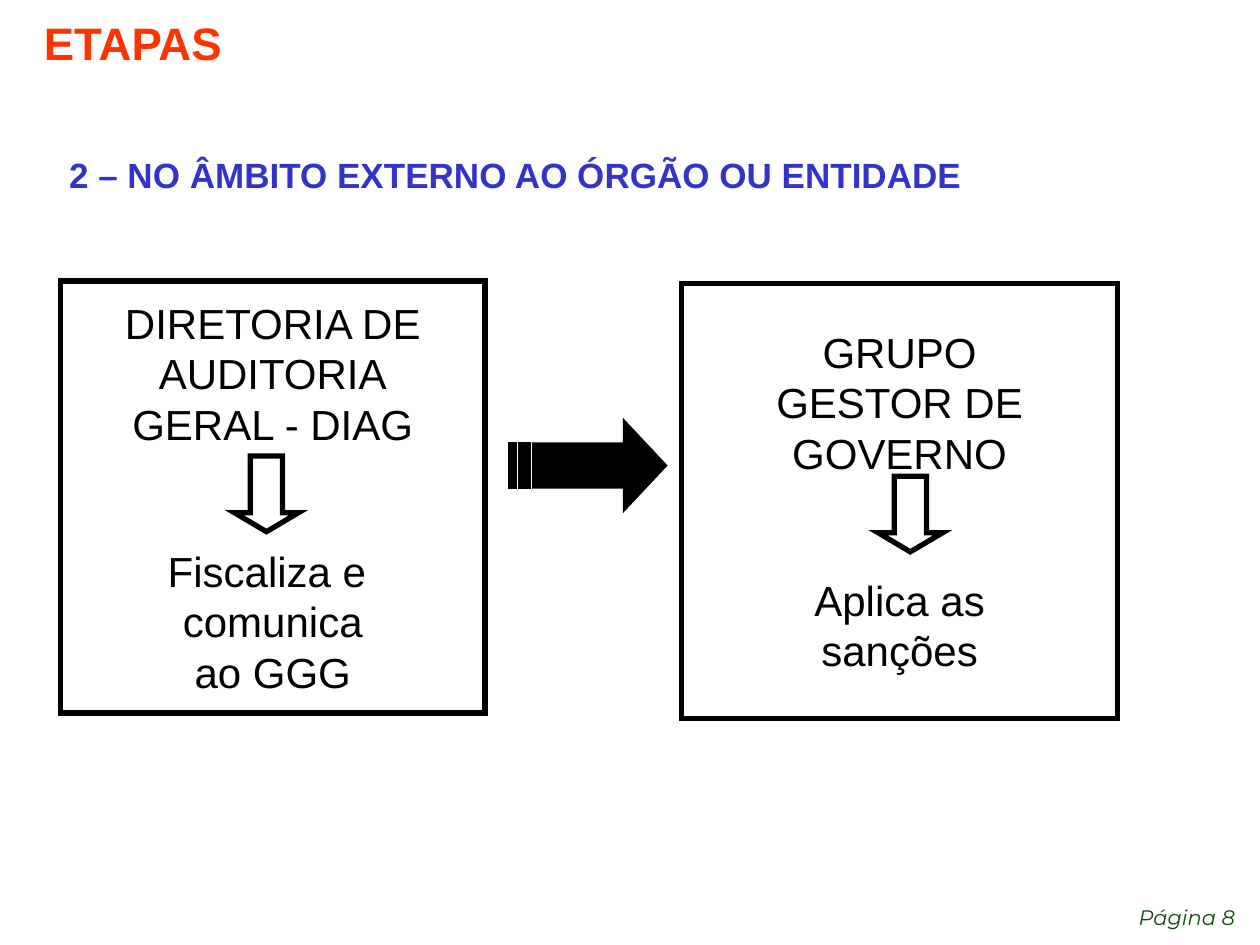
import pptx
import pptx.util
import pptx.dml.color
import pptx.enum.shapes
import pptx.enum.text
import pptx.oxml.ns
import lxml.etree

COLORS = {"title": "FF3300", "heading": "3333CC", "ink": "000000", "page": "0F4C0E"}
ALIGN = pptx.enum.text.PP_ALIGN
ANCHOR = pptx.enum.text.MSO_ANCHOR
PRESET = pptx.enum.shapes.MSO_SHAPE
STAGE_GAP = 55.2

# fmt: off
captions = [
    {"text": "Página 8", "place": (83.3, 94.53, 15.7, 4.27), "color": "page",
     "font": {"name": "Montserrat", "size": 12, "italic": True},
     "paragraph": {"alignment": ALIGN.RIGHT, "line_spacing": 1.2}, "anchor": ANCHOR.TOP},
    {"text": "ETAPAS", "place": (2.5, 0, 80.8, 8.93), "color": "title",
     "font": {"name": "Arial", "size": 26, "bold": True},
     "paragraph": {"alignment": ALIGN.LEFT}, "anchor": ANCHOR.MIDDLE},
    {"text": "2 – NO ÂMBITO EXTERNO AO ÓRGÃO OU ENTIDADE", "place": (4.5, 15.6, 75.2, 5.73),
     "color": "heading", "font": {"name": "Arial", "size": 20, "bold": True},
     "paragraph": {"alignment": ALIGN.LEFT}, "anchor": ANCHOR.TOP},
]
stages = [
    {"place": (4.8, 29.73, 33.7, 45.73), "arrow": (18.6, 48.27),
     "body": ["DIRETORIA DE", "AUDITORIA", "GERAL - DIAG"],
     "action": ["Fiscaliza e ", "comunica", "ao GGG"]},
    {"place": (54.1, 30, 34.6, 46), "arrow": (69.7, 50.4),
     "body": ["GRUPO", "GESTOR DE", "GOVERNO"],
     "action": ["Aplica as", "sanções"]},
]
# fmt: on
down_arrow_size = (5.1, 8)
transfer_place = (40.5, 44.93, 12.2, 8.67)
transfer_outlines = [
    [(0.75, 0), (0.75, 0.25), (0.16, 0.25), (0.16, 0.75), (0.75, 0.75), (0.75, 1), (1, 0.5)],
    [(0.07, 0.25), (0.07, 0.75), (0.12, 0.75), (0.12, 0.25)],
    [(0, 0.25), (0, 0.75), (0.03, 0.75), (0.03, 0.25)],
]

deck = pptx.Presentation()
deck.slide_width = pptx.util.Inches(10)
deck.slide_height = pptx.util.Inches(7.5)
slide = deck.slides.add_slide(deck.slide_layouts[6])


def rgb(key):
    return pptx.dml.color.RGBColor.from_string(COLORS[key])


def to_slide(place):
    extents = (deck.slide_width, deck.slide_height) * 2
    return [round(share * extent / 100) for share, extent in zip(place, extents)]


def set_all(target, values):
    for attribute, value in values.items():
        setattr(target, attribute, value)


def write(paragraph, text, font, color):
    run = paragraph.add_run()
    run.text = text
    set_all(run.font, {**font, "size": pptx.util.Pt(font["size"])})
    run.font.color.rgb = rgb(color)


def outline(shape):
    shape.shadow.inherit = False
    shape.line.color.rgb = rgb("ink")
    shape.line.width = pptx.util.Pt(3)
    miter = lxml.etree.SubElement(shape.line._get_or_add_ln(), pptx.oxml.ns.qn("a:miter"))
    miter.set("lim", "800000")


def hollow(preset, place):
    shape = slide.shapes.add_shape(preset, *to_slide(place))
    shape.fill.background()
    outline(shape)
    return shape


def add_stage(stage):
    frame = hollow(PRESET.RECTANGLE, stage["place"]).text_frame
    set_all(frame, {"word_wrap": False, "vertical_anchor": ANCHOR.MIDDLE})
    for index, text in enumerate(stage["body"] + stage["action"]):
        paragraph = frame.add_paragraph() if index else frame.paragraphs[0]
        paragraph.alignment = ALIGN.CENTER
        if index == len(stage["body"]):
            paragraph.space_before = pptx.util.Pt(STAGE_GAP)
        write(paragraph, text, {"name": "Arial", "size": 24}, "ink")
    down_arrow = hollow(PRESET.DOWN_ARROW, stage["arrow"] + down_arrow_size)
    down_arrow.adjustments[0] = 0.5
    down_arrow.adjustments[1] = 0.295


def add_transfer():
    left, top, width, height = to_slide(transfer_place)
    contours = [
        [(round(left + x * width), round(top + y * height)) for x, y in points]
        for points in transfer_outlines
    ]
    builder = slide.shapes.build_freeform(*contours[0][0])
    for index, contour in enumerate(contours):
        if index:
            builder.move_to(*contour[0])
        builder.add_line_segments(contour[1:], close=True)
    transfer = builder.convert_to_shape()
    transfer.fill.solid()
    transfer.fill.fore_color.rgb = rgb("ink")
    outline(transfer)


for caption in captions:
    frame = slide.shapes.add_textbox(*to_slide(caption["place"])).text_frame
    set_all(frame, {"word_wrap": True, "vertical_anchor": caption["anchor"]})
    set_all(frame.paragraphs[0], caption["paragraph"])
    write(frame.paragraphs[0], caption["text"], caption["font"], caption["color"])

for stage in stages:
    add_stage(stage)
add_transfer()

deck.save("out.pptx")
